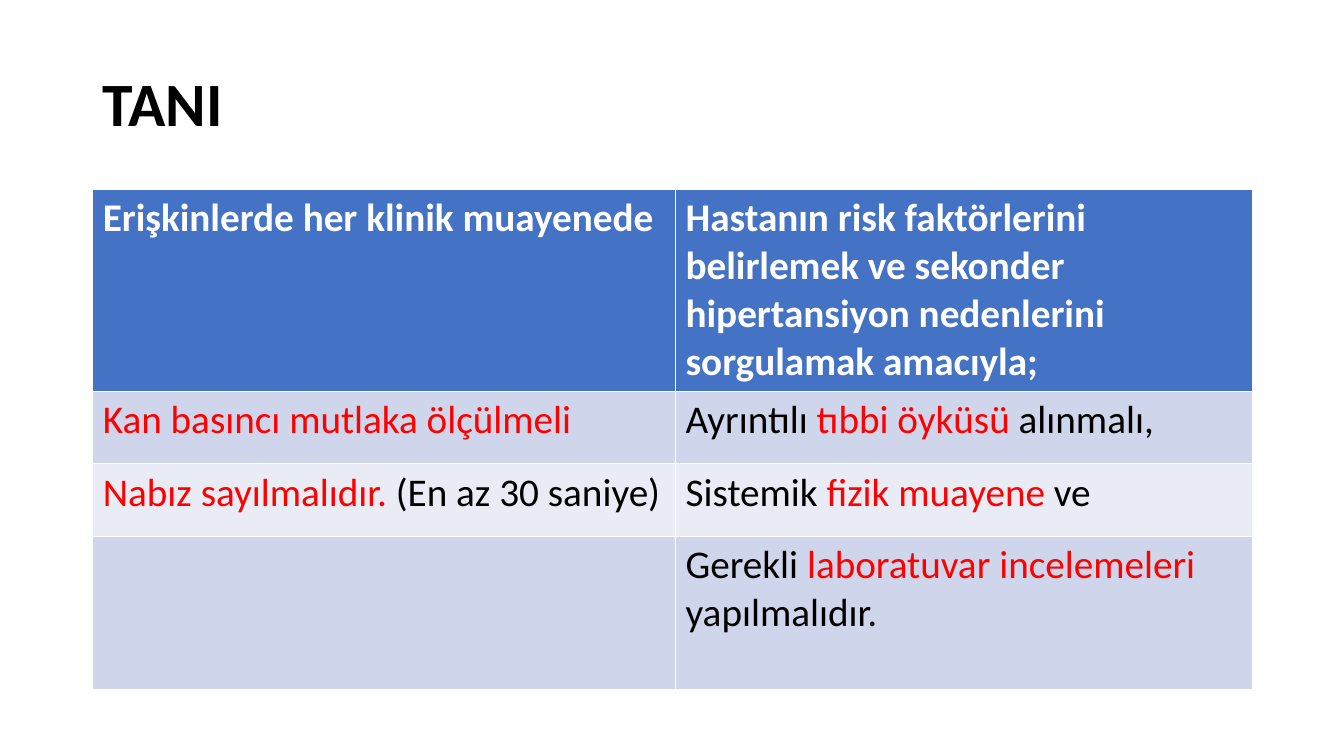
"""Build the diagnosis slide with its two-column table."""
from pptx import Presentation
from pptx.dml.color import RGBColor
from pptx.enum.text import MSO_ANCHOR, PP_ALIGN
from pptx.util import Inches, Pt

MIDDLE = MSO_ANCHOR.MIDDLE
LEFT = PP_ALIGN.LEFT
TITLE_ONLY = 5

BLACK = RGBColor(0x00, 0x00, 0x00)
WHITE = RGBColor(0xFF, 0xFF, 0xFF)
RED = RGBColor(0xFF, 0x00, 0x00)
HEADER_BLUE = RGBColor(0x44, 0x72, 0xC4)
BAND_DARK = RGBColor(0xCF, 0xD5, 0xEA)
BAND_LIGHT = RGBColor(0xE9, 0xEB, 0xF5)

TITLE_FORMAT = {"name": "Calibri", "size": Pt(44), "bold": True}
HEADER_FORMAT = {"name": "Calibri", "size": Pt(28), "bold": True}
BODY_FORMAT = {"name": "Calibri", "size": Pt(28), "bold": False}

COLUMN_WIDTHS = (5.78, 5.72)
ROW_HEIGHTS = (1.98, 0.72, 0.72, 1.52)
ROWS = [
    [
        [("Erişkinlerde her klinik muayenede", WHITE)],
        [("Hastanın risk faktörlerini belirlemek ve sekonder "
          "hipertansiyon nedenlerini sorgulamak amacıyla;", WHITE)],
    ],
    [
        [("Kan basıncı mutlaka ölçülmeli", RED)],
        [("Ayrıntılı", BLACK), (" tıbbi öyküsü ", RED), ("alınmalı,", BLACK)],
    ],
    [
        [("Nabız sayılmalıdır. ", RED), ("(En az 30 saniye)", BLACK)],
        [("Sistemik ", BLACK), ("fizik muayene ", RED), ("ve", BLACK)],
    ],
    [
        [],
        [("Gerekli ", BLACK), ("laboratuvar incelemeleri", RED),
         (" yapılmalıdır.", BLACK)],
    ],
]


class SlideBuilder:
    """Hold the current slide and add formatted elements to it."""

    def __init__(self, deck):
        """Start a slide with a title placeholder."""
        self.slide = deck.slides.add_slide(deck.slide_layouts[TITLE_ONLY])

    def add_spans(self, para, spans, text_format):
        """Add coloured spans to a paragraph."""
        for text, color in spans:
            span = para.add_run()
            span.text = text
            for name, value in text_format.items():
                setattr(span.font, name, value)
            span.font.color.rgb = color

    def add_title(self, text, left, top, width, height):
        """Place and fill the title."""
        box = self.slide.shapes.title
        frame = {"left": left, "top": top, "width": width, "height": height}
        for name, value in frame.items():
            setattr(box, name, Inches(value))
        box.text_frame.vertical_anchor = MIDDLE
        para = box.text_frame.paragraphs[0]
        para.alignment = LEFT
        para.line_spacing = 0.9
        self.add_spans(para, [(text, BLACK)], TITLE_FORMAT)

    def add_table(self, rows, left, top):
        """Add a table with a header and banded rows."""
        table = self.slide.shapes.add_table(
            len(rows), len(COLUMN_WIDTHS), Inches(left), Inches(top),
            Inches(sum(COLUMN_WIDTHS)), Inches(sum(ROW_HEIGHTS))).table
        for column, width in zip(table.columns, COLUMN_WIDTHS):
            column.width = Inches(width)
        for index, (row, height) in enumerate(zip(table.rows, ROW_HEIGHTS)):
            row.height = Inches(height)
            band = BAND_DARK if index % 2 else BAND_LIGHT
            fill = band if index else HEADER_BLUE
            text_format = BODY_FORMAT if index else HEADER_FORMAT
            for cell, spans in zip(row.cells, rows[index]):
                cell.fill.solid()
                cell.fill.fore_color.rgb = fill
                para = cell.text_frame.paragraphs[0]
                self.add_spans(para, spans, text_format)


def main():
    """Create the deck and save it."""
    deck = Presentation()
    deck.slide_width = Inches(13.33)
    deck.slide_height = Inches(7.5)
    builder = SlideBuilder(deck)
    builder.add_title("TANI", 0.92, 0.4, 11.5, 1.31)
    builder.add_table(ROWS, 0.92, 1.88)
    deck.save("out.pptx")


if __name__ == "__main__":
    main()
